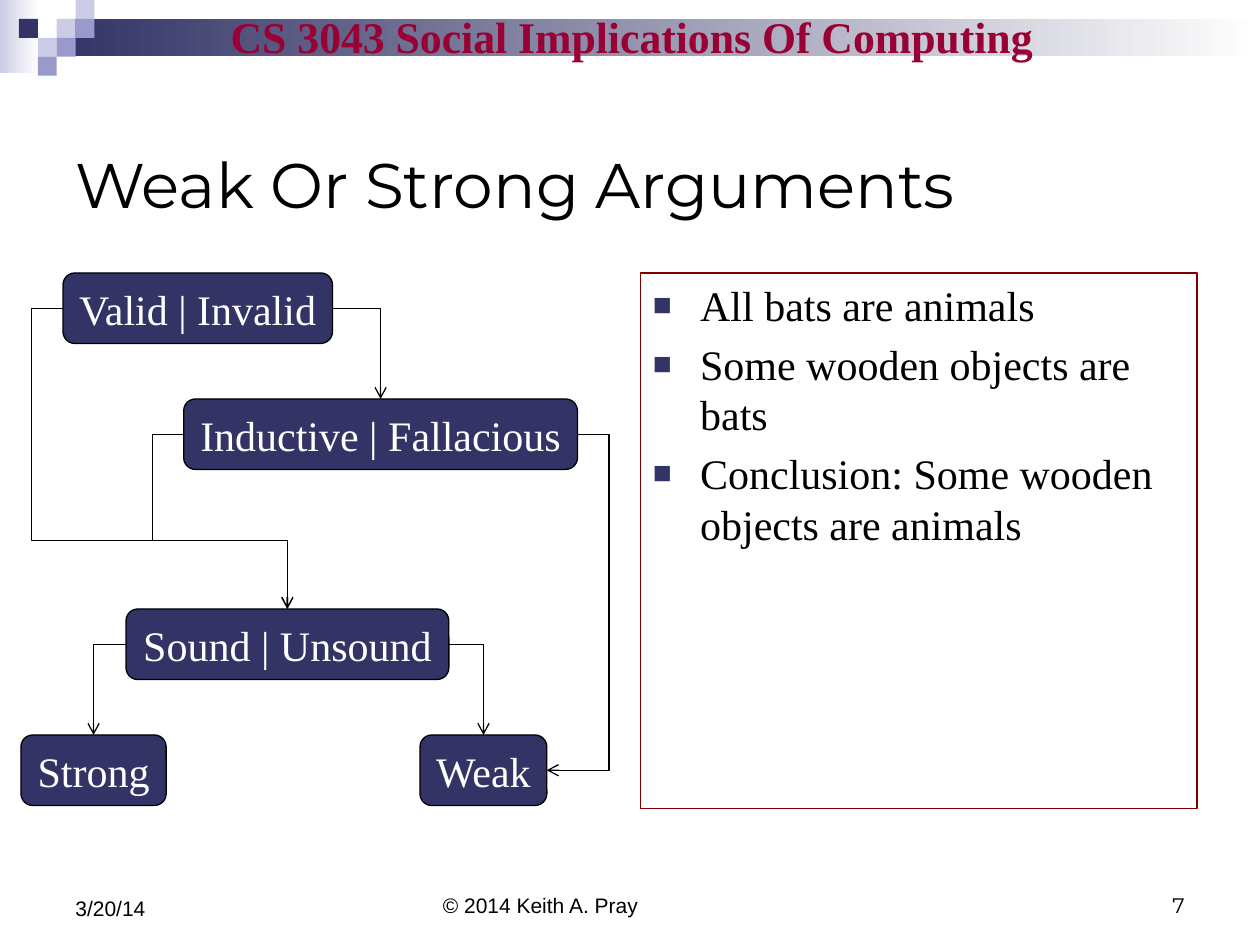
from dataclasses import dataclass

from lxml import etree
from pptx import Presentation
from pptx import util as u
from pptx.dml.color import RGBColor
from pptx.enum import shapes, text
from pptx.oxml.ns import qn

TOP, LEFT, RIGHT = 0, 1, 3
ALIGN = {"l": text.PP_ALIGN.LEFT, "c": text.PP_ALIGN.CENTER, "r": text.PP_ALIGN.RIGHT}
ANCHOR = {"t": text.MSO_ANCHOR.TOP, "m": text.MSO_ANCHOR.MIDDLE, "b": text.MSO_ANCHOR.BOTTOM}


@dataclass(frozen=True)
class Theme:
    navy: str = "333366"
    lilac: str = "9999CC"
    pale: str = "CCCCE6"
    white: str = "FFFFFF"
    black: str = "000000"
    wine: str = "990033"
    maroon: str = "800000"
    serif: str = "Times New Roman"
    sans: str = "Arial"
    head: str = "Montserrat"
    title: float = 36
    banner: float = 25
    body: float = 24
    small: float = 12
    line: float = 0.75


def color(code):
    return RGBColor.from_string(code)


def write(frame, *lines, font, size, ink, bold=False, align="l", anchor="t",
          wrap=True, gap=0, bullet=None):
    """Fill a text frame with one paragraph per line."""
    frame.word_wrap = wrap
    frame.vertical_anchor = ANCHOR[anchor]
    for i, line in enumerate(lines):
        para = frame.add_paragraph() if i else frame.paragraphs[0]
        if bullet:
            mark(para, bullet)
        para.alignment = ALIGN[align]
        if i:
            para.space_before = u.Pt(gap)
        run = para.add_run()
        run.text = line
        run.font.name = font
        run.font.size = u.Pt(size)
        run.font.bold = bold
        run.font.color.rgb = color(ink)


def mark(para, ink, indent=27):
    """Give a paragraph a hanging square bullet."""
    props = para._p.get_or_add_pPr()
    props.set("marL", str(u.Pt(indent)))
    props.set("indent", str(-u.Pt(indent)))
    tint = etree.SubElement(props, qn("a:buClr"))
    etree.SubElement(tint, qn("a:srgbClr"), val=ink)
    etree.SubElement(props, qn("a:buSzPct"), val="75000")
    etree.SubElement(props, qn("a:buFont"), typeface="Arial")
    etree.SubElement(props, qn("a:buChar"), char="■")


class Deck:
    def __init__(self, theme):
        self.theme = theme
        self.file = Presentation()
        self.file.slide_width, self.file.slide_height = u.Pt(720), u.Pt(540)
        self.slide = self.file.slides.add_slide(self.file.slide_layouts[6])

    def shape(self, box, fill=None, line=None, kind=shapes.MSO_SHAPE.RECTANGLE):
        """Draw a preset shape; two fill colours make a gradient to the right."""
        item = self.slide.shapes.add_shape(kind, *map(u.Pt, box))
        item.shadow.inherit = False
        if fill is None:
            item.fill.background()
        elif isinstance(fill, tuple):
            item.fill.gradient()
            item.fill.gradient_angle = 0
            for stop, ink, place in zip(item.fill.gradient_stops, fill, (0, 1)):
                stop.color.rgb = color(ink)
                stop.position = place
        else:
            item.fill.solid()
            item.fill.fore_color.rgb = color(fill)
        if line:
            item.line.color.rgb = color(line)
            item.line.width = u.Pt(self.theme.line)
        else:
            item.line.fill.background()
        return item

    def label(self, box, words, **style):
        item = self.slide.shapes.add_textbox(*map(u.Pt, box))
        write(item.text_frame, words, **style)

    def node(self, box, words):
        t = self.theme
        item = self.shape(box, t.navy, t.black, shapes.MSO_SHAPE.ROUNDED_RECTANGLE)
        write(item.text_frame, words, font=t.serif, size=t.body, ink=t.white,
              align="c", anchor="m", wrap=False)
        return item

    def link(self, start, out, end, into, rail=None, reach=18):
        """Join two nodes by a bent arrow.

        Into a top it turns once, or runs along the height of rail if given;
        into a side it swings out by reach.
        """
        x1, y1 = site(start, out)
        x2, y2 = site(end, into)
        line = self.slide.shapes.add_connector(
            shapes.MSO_CONNECTOR.ELBOW, x1, y1, x2, y2)
        line.begin_connect(start, out)
        line.end_connect(end, into)
        line.line.color.rgb = color(self.theme.black)
        line.line.width = u.Pt(self.theme.line)
        etree.SubElement(line.line._get_or_add_ln(), qn("a:tailEnd"), type="arrow")

        swing = u.Pt(reach) * (1 if out == RIGHT else -1) / (x2 - x1)
        if into != TOP:
            preset, bends = "bentConnector3", [swing]
        elif rail:
            preset, bends = "bentConnector4", [swing, (u.Pt(rail) - y1) / (y2 - y1)]
        else:
            preset, bends = "bentConnector2", []
        props = line._element.spPr
        geom = props.find(qn("a:prstGeom"))
        geom.set("prst", preset)
        guides = geom.find(qn("a:avLst"))
        for i, bend in enumerate(bends, 1):
            etree.SubElement(guides, qn("a:gd"), name=f"adj{i}",
                             fmla=f"val {round(bend * 100000)}")
        etree.SubElement(props, qn("a:effectLst"))


def site(item, side):
    """Middle of a node's top, left or right side."""
    if side == TOP:
        return item.left + item.width // 2, item.top
    return item.left + (item.width if side == RIGHT else 0), item.top + item.height // 2


def main():
    t = Theme()
    deck = Deck(t)

    deck.shape((0, 0, 22, 42), (t.pale, t.white))
    deck.shape((32.5, 10.8, 687.5, 21.4), (t.navy, t.white))
    tile = 10.8
    tiles = [(3, 1, t.pale), (4, 0, t.pale), (4, 1, t.lilac), (2, 2, t.pale),
             (1, 1, t.navy), (3, 2, t.lilac), (2, 3, t.lilac)]
    for col, row, ink in tiles:
        deck.shape((col * tile, row * tile, tile, tile), ink)

    deck.label((124, 2, 474, 37.5), "CS 3043 Social Implications Of Computing",
               font=t.serif, size=t.banner, ink=t.wine, bold=True,
               align="c", anchor="m", wrap=False)
    deck.label((36, 60, 648, 90), "Weak Or Strong Arguments",
               font=t.head, size=t.title, ink=t.black, anchor="m")

    panel = deck.shape((366, 156, 318, 306), line=t.maroon)
    write(panel.text_frame, "All bats are animals", "Some wooden objects are bats",
          "Conclusion: Some wooden objects are animals",
          font=t.serif, size=t.body, ink=t.black, gap=5, bullet=t.navy)

    foot = dict(size=t.small, ink=t.black, anchor="b")
    deck.label((246, 492, 228, 36), "© 2014 Keith A. Pray", font=t.sans, **foot)
    deck.label((516, 492, 168, 36), "7", font=t.head, align="r", **foot)
    deck.label((36, 492, 168, 37.5), "3/20/14", font=t.sans, **foot)

    high = 40.3
    valid = deck.node((36, 156, 154, high), "Valid | Invalid")
    induct = deck.node((105, 228, 225, high), "Inductive | Fallacious")
    sound = deck.node((72, 348, 184.5, high), "Sound | Unsound")
    weak = deck.node((240, 420, 72.5, high), "Weak")
    strong = deck.node((12, 420, 83, high), "Strong")

    deck.link(valid, RIGHT, induct, TOP)
    deck.link(valid, LEFT, sound, TOP, rail=309)
    deck.link(induct, RIGHT, weak, RIGHT)
    deck.link(sound, RIGHT, weak, TOP)
    deck.link(sound, LEFT, strong, TOP)
    deck.link(induct, LEFT, sound, TOP, rail=309)

    deck.file.save("out.pptx")


if __name__ == "__main__":
    main()
